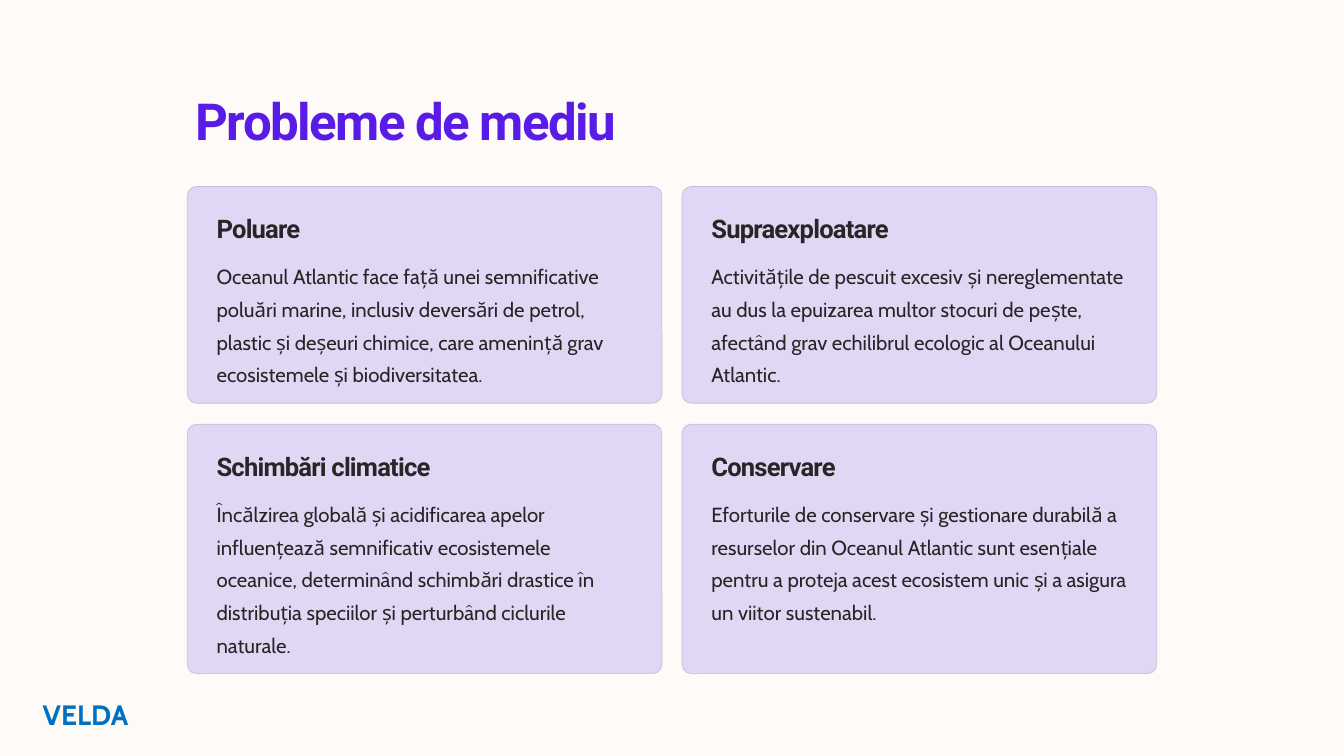
from dataclasses import dataclass
from pptx import Presentation
from pptx.dml.color import RGBColor
from pptx.enum.shapes import MSO_SHAPE
from pptx.enum.text import MSO_AUTO_SIZE
from pptx.slide import Slide
from pptx.util import Inches, Pt

COLORS = {
    "background": "FDFAF7",
    "title": "591CE6",
    "card": "E0D7F4",
    "border": "C6BDDA",
    "text": "272525",
    "footer": "0070C0",
}
GRID_LEFT, GRID_TOP = 2.23, 2.22
COLUMN_WIDTH, COLUMN_GAP = 5.65, 0.24
ROW_HEIGHTS, ROW_GAP = (2.58, 2.97), 0.25
PADDING, BODY_OFFSET = 0.25, 0.78
CORNER_RADIUS = 0.11


@dataclass(frozen=True)
class Box:
    left: float
    top: float
    width: float
    height: float

    def emu(self) -> tuple[int, int, int, int]:
        return (Inches(self.left), Inches(self.top),
                Inches(self.width), Inches(self.height))


@dataclass(frozen=True)
class Style:
    font: str
    size: float
    line: float
    color: str
    bold: bool = False
    tracking: float = 0
    wrap: bool = True


@dataclass(frozen=True)
class Card:
    column: int
    row: int
    heading: str
    body: str

    def box(self) -> Box:
        left = GRID_LEFT + self.column * (COLUMN_WIDTH + COLUMN_GAP)
        top = GRID_TOP + sum(ROW_HEIGHTS[:self.row]) + self.row * ROW_GAP
        return Box(left, top, COLUMN_WIDTH, ROW_HEIGHTS[self.row])


TITLE = Style("Roboto", 43.7, 54.7, "title", True, -1.3, False)
HEADING = Style("Roboto", 21.9, 27.3, "text", True, -0.7, False)
BODY = Style("Cabin", 17.5, 28, "text")
FOOTER = Style("Cabin", 24, 30.6, "footer", True)

CARDS = (
    Card(0, 0, "Poluare",
         "Oceanul Atlantic face față unei semnificative poluări marine, "
         "inclusiv deversări de petrol, plastic și deșeuri chimice, care "
         "amenință grav ecosistemele și biodiversitatea."),
    Card(1, 0, "Supraexploatare",
         "Activitățile de pescuit excesiv și nereglementate au dus la "
         "epuizarea multor stocuri de pește, afectând grav echilibrul "
         "ecologic al Oceanului Atlantic."),
    Card(0, 1, "Schimbări climatice",
         "Încălzirea globală și acidificarea apelor influențează "
         "semnificativ ecosistemele oceanice, determinând schimbări drastice "
         "în distribuția speciilor și perturbând ciclurile naturale."),
    Card(1, 1, "Conservare",
         "Eforturile de conservare și gestionare durabilă a resurselor din "
         "Oceanul Atlantic sunt esențiale pentru a proteja acest ecosistem "
         "unic și a asigura un viitor sustenabil."),
)


def rgb(name: str) -> RGBColor:
    return RGBColor.from_string(COLORS[name])


def add_text(s: Slide, box: Box, text: str, style: Style) -> None:
    tf = s.shapes.add_textbox(*box.emu()).text_frame
    tf.word_wrap = style.wrap
    tf.auto_size = MSO_AUTO_SIZE.NONE
    p = tf.paragraphs[0]
    p.line_spacing = Pt(style.line)
    p.font.name = style.font
    p.font.size = Pt(style.size)
    p.font.bold = style.bold
    p.font.color.rgb = rgb(style.color)
    r = p.add_run()
    r.text = text
    if style.tracking:
        r._r.get_or_add_rPr().set("spc", str(round(style.tracking * 100)))


def add_card(s: Slide, card: Card) -> None:
    box = card.box()
    sp = s.shapes.add_shape(MSO_SHAPE.ROUNDED_RECTANGLE, *box.emu())
    sp.adjustments[0] = CORNER_RADIUS / box.height
    sp.shadow.inherit = False
    sp.fill.solid()
    sp.fill.fore_color.rgb = rgb("card")
    sp.line.color.rgb = rgb("border")
    sp.line.width = Pt(0.6)
    left = box.left + PADDING
    add_text(s, Box(left, box.top + PADDING, 3.04, 0.38), card.heading, HEADING)
    body = Box(left, box.top + BODY_OFFSET, box.width - 2 * PADDING,
               box.height - BODY_OFFSET - PADDING)
    add_text(s, body, card.body, BODY)


def main() -> None:
    prs = Presentation()
    prs.slide_width, prs.slide_height = Inches(16), Inches(9)
    s = prs.slides.add_slide(prs.slide_layouts[6])
    s.background.fill.solid()
    s.background.fill.fore_color.rgb = rgb("background")
    add_text(s, Box(GRID_LEFT, 0.98, 6.08, 0.76), "Probleme de mediu", TITLE)
    for card in CARDS:
        add_card(s, card)
    add_text(s, Box(0.41, 8.23, 1.49, 0.52), "VELDA", FOOTER)
    prs.save("out.pptx")


if __name__ == "__main__":
    main()
